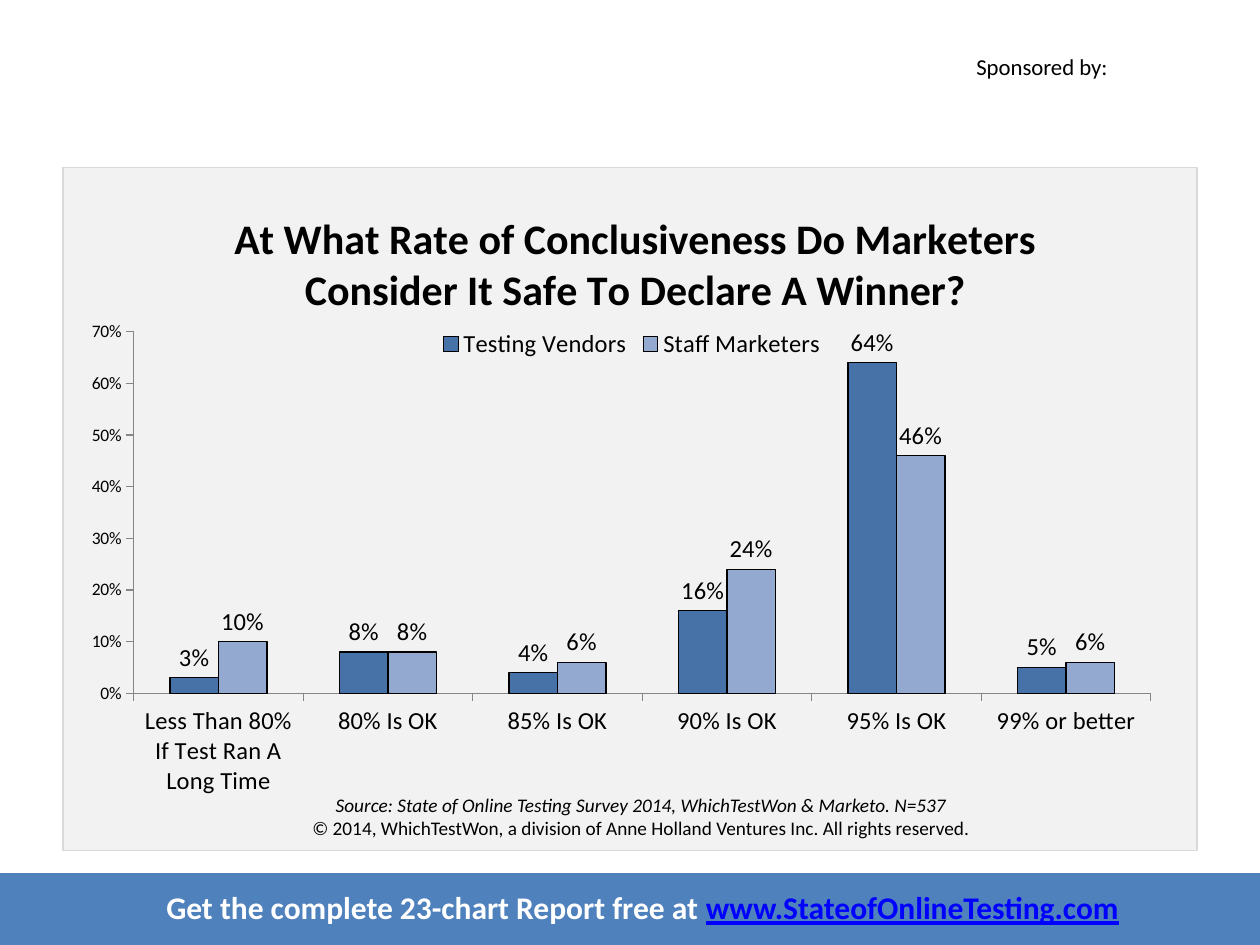
from lxml.etree import SubElement
from pptx import Presentation
from pptx.chart.data import CategoryChartData
from pptx.dml.color import RGBColor
from pptx.enum.chart import (XL_CHART_TYPE, XL_LABEL_POSITION,
                             XL_LEGEND_POSITION, XL_TICK_MARK)
from pptx.enum.shapes import MSO_SHAPE
from pptx.enum.text import PP_ALIGN
from pptx.oxml.ns import qn
from pptx.util import Inches, Pt

FONT = "Calibri"
BLACK, WHITE, BLUE, LINK = "000000", "FFFFFF", "4F81BD", "0000FF"
PANEL, PANEL_EDGE, AXIS = "F2F2F2", "D9D9D9", "868686"

TITLE = ("At What Rate of Conclusiveness Do Marketers "
         "Consider It Safe To Declare A Winner?")
CATEGORIES = ["Less Than 80% If Test Ran A Long Time", "80% Is OK",
              "85% Is OK", "90% Is OK", "95% Is OK", "99% or better"]
SERIES = [
    ("Testing Vendors", "4672A8", [0.03, 0.08, 0.04, 0.16, 0.64, 0.05]),
    ("Staff Marketers", "93A9CF", [0.10, 0.08, 0.06, 0.24, 0.46, 0.06]),
]


def rgb(value):
    return RGBColor.from_string(value)


def style(font, size, color=BLACK, bold=False, italic=False, underline=False):
    font.name, font.size = FONT, Pt(size)
    font.bold, font.italic = bold, italic
    font.color.rgb = rgb(color)
    if underline:
        font.underline = True


def add_run(p, text, **fmt):
    r = p.add_run()
    r.text = text
    style(r.font, **fmt)


def place(element, after=None, target=None, **shares):
    """Position a chart part by shares of the chart's size."""
    layout = element.find(qn("c:layout"))
    if layout is None:
        layout = SubElement(element, qn("c:layout"))
        if after:
            element.find(qn(after)).addnext(layout)
        else:
            element.insert(0, layout)
    for child in list(layout):
        layout.remove(child)
    manual = SubElement(layout, qn("c:manualLayout"))
    if target:
        SubElement(manual, qn("c:layoutTarget"), val=target)
    for key in ("x", "y"):
        SubElement(manual, qn(f"c:{key}Mode"), val="edge")
    for key, share in shares.items():
        SubElement(manual, qn(f"c:{key}"), val=str(share))


class SlideBuilder:
    """Holds the slide; boxes are left, top, width, height in percent."""

    def __init__(self, prs):
        self.width, self.height = prs.slide_width, prs.slide_height
        self.s = prs.slides.add_slide(prs.slide_layouts[6])

    def box(self, x, y, w, h):
        return (int(self.width * x / 100), int(self.height * y / 100),
                int(self.width * w / 100), int(self.height * h / 100))

    def rect(self, box, fill, line=None):
        sp = self.s.shapes.add_shape(MSO_SHAPE.RECTANGLE, *self.box(*box))
        sp.shadow.inherit = False
        sp.fill.solid()
        sp.fill.fore_color.rgb = rgb(fill)
        if line:
            sp.line.color.rgb = rgb(line)
            sp.line.width = Pt(1)
        else:
            sp.line.fill.background()

    def text(self, box, paragraphs, align=PP_ALIGN.CENTER):
        """Each paragraph is a list of (text, format) runs."""
        tf = self.s.shapes.add_textbox(*self.box(*box)).text_frame
        tf.word_wrap = True
        for i, runs in enumerate(paragraphs):
            p = tf.add_paragraph() if i else tf.paragraphs[0]
            p.alignment = align
            for text, fmt in runs:
                add_run(p, text, **fmt)

    def columns(self, box, title, categories, series):
        data = CategoryChartData(number_format="0%")
        data.categories = categories
        for name, _, values in series:
            data.add_series(name, values)
        chart = self.s.shapes.add_chart(
            XL_CHART_TYPE.COLUMN_CLUSTERED, *self.box(*box), data).chart
        style(chart.font, 10)

        # Title and legend
        chart.has_title = True
        add_run(chart.chart_title.text_frame.paragraphs[0], title,
                size=24, bold=True)
        place(chart.chart_title._element, "c:tx", x=0.13, y=0.05)
        chart.has_legend = True
        legend = chart.legend
        legend.position = XL_LEGEND_POSITION.TOP
        legend.include_in_layout = False
        style(legend.font, 14)
        place(legend._element, "c:legendPos", x=0.32, y=0.23, w=0.36, h=0.05)

        # Axes
        for axis, size in ((chart.category_axis, 14), (chart.value_axis, 10)):
            axis.has_major_gridlines = False
            axis.major_tick_mark = XL_TICK_MARK.OUTSIDE
            axis.minor_tick_mark = XL_TICK_MARK.NONE
            axis.format.line.color.rgb = rgb(AXIS)
            style(axis.tick_labels.font, size)
        axis.minimum_scale, axis.maximum_scale, axis.major_unit = 0, 0.7, 0.1
        axis.tick_labels.number_format = "0%"
        axis.tick_labels.number_format_is_linked = False

        # Columns and their labels
        plot = chart.plots[0]
        plot.gap_width, plot.overlap = 150, 0
        plot.vary_by_categories = False
        for ser, (_, color, _) in zip(plot.series, series):
            ser.format.fill.solid()
            ser.format.fill.fore_color.rgb = rgb(color)
            ser.format.line.color.rgb = rgb(BLACK)
            ser.format.line.width = Pt(0.75)
            labels = ser.data_labels
            labels.show_value = True
            labels.position = XL_LABEL_POSITION.OUTSIDE_END
            labels.number_format = "0%"
            labels.number_format_is_linked = False
            style(labels.font, 14)
        place(chart._chartSpace.chart.plotArea, target="inner",
              x=0.045, y=0.237, w=0.929, h=0.522)


def main():
    prs = Presentation()
    prs.slide_width, prs.slide_height = Inches(10), Inches(7.5)
    slide = SlideBuilder(prs)

    # Panel, footer band and sponsor line
    slide.rect((5, 17.73, 90, 72.27), PANEL, PANEL_EDGE)
    slide.rect((0, 92.4, 100, 7.6), BLUE)
    slide.text((76.5, 4.93, 15.5, 4.27),
               [[("Sponsored by:", dict(size=13))]], PP_ALIGN.LEFT)
    slide.text((6.4, 93.33, 89.2, 5.33), [[
        ("Get the complete 23-chart Report free at ",
         dict(size=18, color=WHITE, bold=True)),
        ("www.StateofOnlineTesting.com",
         dict(size=18, color=LINK, bold=True, underline=True)),
    ]])

    # Chart and source lines
    slide.columns((6.7, 17.73, 86.9, 73.33), TITLE, CATEGORIES, SERIES)
    slide.text((7.6, 83.33, 86.6, 6.27), [
        [("Source: State of Online Testing Survey 2014, "
          "WhichTestWon & Marketo. N=537", dict(size=11, italic=True))],
        [("© 2014, WhichTestWon, a division of Anne Holland Ventures Inc. "
          "All rights reserved.", dict(size=11))],
    ])
    prs.save("out.pptx")


if __name__ == "__main__":
    main()
